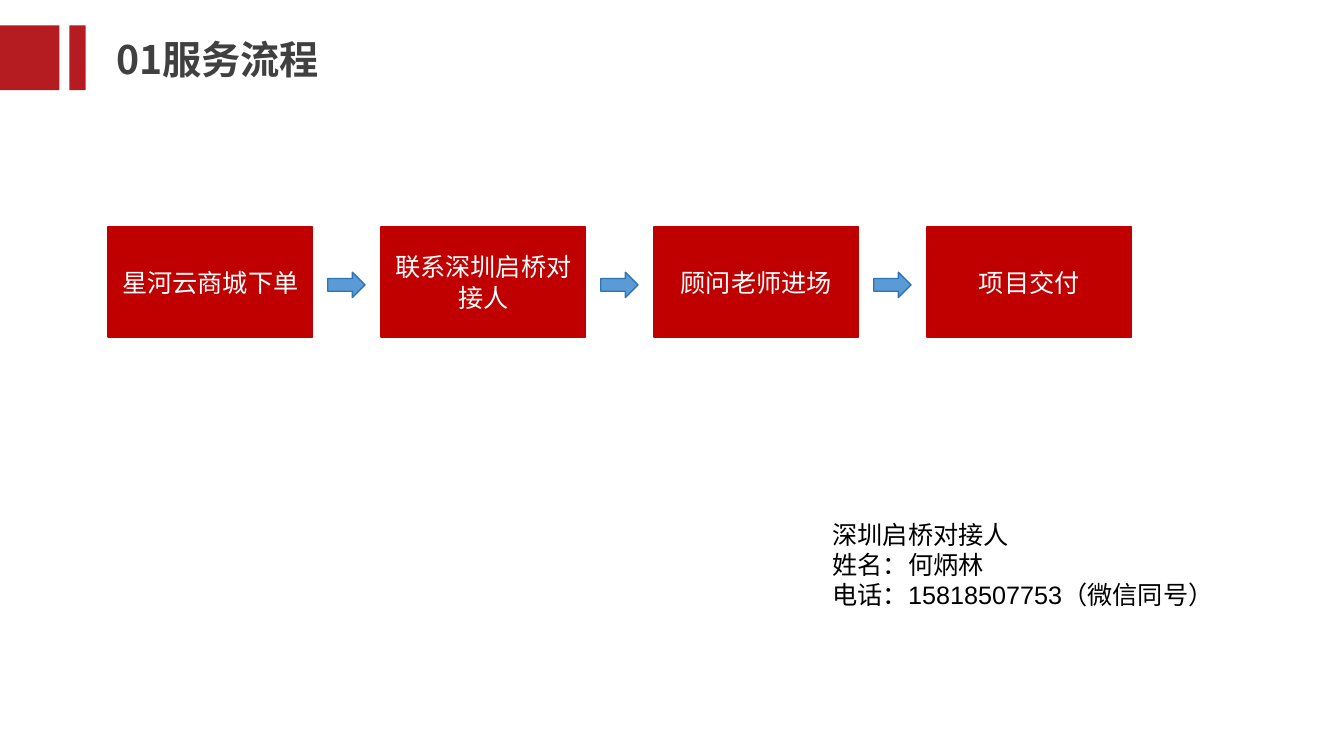
from dataclasses import dataclass

from lxml.etree import SubElement
from pptx import Presentation
from pptx.dml.color import RGBColor
from pptx.enum.shapes import MSO_SHAPE
from pptx.enum.text import MSO_ANCHOR, MSO_AUTO_SIZE, PP_ALIGN
from pptx.oxml.ns import qn
from pptx.util import Cm, Pt


@dataclass(frozen=True)
class Theme:
    accent: str = "B51C22"
    step: str = "C00000"
    arrow: str = "5B9BD5"
    arrow_line: str = "2E75B6"
    heading: str = "404040"
    body: str = "000000"
    on_step: str = "FFFFFF"
    body_font: str = "Arial"
    chinese_font: str = "Noto Sans CJK SC"
    heading_size: int = 28
    body_size: int = 18


class SlideBuilder:
    def __init__(self, deck, theme):
        self.theme = theme
        self.slide = deck.slides.add_slide(deck.slide_layouts[5])

    def format_text(self, frame, size, color, font, align, bold=False):
        for paragraph in frame.paragraphs:
            paragraph.alignment = align
            for run in paragraph.runs:
                run.font.size = Pt(size)
                run.font.bold = bold
                run.font.name = font
                run.font.color.rgb = RGBColor.from_string(color)
                east_asian = SubElement(run.font._element, qn("a:ea"))
                east_asian.set("typeface", self.theme.chinese_font)

    def title(self, text, left, top, width, height):
        heading = self.slide.shapes.title
        heading.left, heading.top = Cm(left), Cm(top)
        heading.width, heading.height = Cm(width), Cm(height)
        frame = heading.text_frame
        frame.text = text
        frame.auto_size = MSO_AUTO_SIZE.NONE
        frame.vertical_anchor = MSO_ANCHOR.MIDDLE
        frame.paragraphs[0].line_spacing = 0.9
        self.format_text(frame, self.theme.heading_size, self.theme.heading,
                         self.theme.chinese_font, PP_ALIGN.LEFT, bold=True)

    def block(self, kind, left, top, width, height, fill, line=None):
        shape = self.slide.shapes.add_shape(
            kind, Cm(left), Cm(top), Cm(width), Cm(height))
        shape.shadow.inherit = False
        shape.fill.solid()
        shape.fill.fore_color.rgb = RGBColor.from_string(fill)
        if line:
            shape.line.color.rgb = RGBColor.from_string(line)
            shape.line.width = Pt(1)
        else:
            shape.line.fill.background()
        return shape

    def accent(self, left, width):
        self.block(MSO_SHAPE.RECTANGLE, left, 0.64, width, 1.63,
                   self.theme.accent)

    def step(self, text, left, top, width, height):
        box = self.block(MSO_SHAPE.RECTANGLE, left, top, width, height,
                         self.theme.step, self.theme.step)
        frame = box.text_frame
        frame.text = text
        frame.word_wrap = True
        frame.vertical_anchor = MSO_ANCHOR.MIDDLE
        self.format_text(frame, self.theme.body_size, self.theme.on_step,
                         self.theme.body_font, PP_ALIGN.CENTER)

    def arrow(self, left, top):
        self.block(MSO_SHAPE.RIGHT_ARROW, left, top, 0.94, 0.64,
                   self.theme.arrow, self.theme.arrow_line)

    def note(self, lines, left, top, width, height):
        frame = self.slide.shapes.add_textbox(
            Cm(left), Cm(top), Cm(width), Cm(height)).text_frame
        frame.text = "\n".join(lines)
        frame.word_wrap = True
        frame.auto_size = MSO_AUTO_SIZE.SHAPE_TO_FIT_TEXT
        self.format_text(frame, self.theme.body_size, self.theme.body,
                         self.theme.body_font, PP_ALIGN.LEFT)


STEPS = ["星河云商城下单", "联系深圳启桥对接人", "顾问老师进场", "项目交付"]
CONTACT = ["深圳启桥对接人", "姓名：何炳林", "电话：15818507753（微信同号）"]
STEP_PITCH = 6.88


def main():
    deck = Presentation()
    deck.slide_width, deck.slide_height = Cm(33.87), Cm(19.05)
    page = SlideBuilder(deck, Theme())

    page.accent(0, 1.5)
    page.accent(1.75, 0.41)
    page.title("01服务流程", 2.67, 0.51, 24.69, 2.08)

    for index, step in enumerate(STEPS):
        page.step(step, 2.72 + index * STEP_PITCH, 5.72, 5.16, 2.77)
    page.note(CONTACT, 20.73, 12.95, 11.23, 2.57)
    for index in range(len(STEPS) - 1):
        page.arrow(8.26 + index * STEP_PITCH, 6.86)

    deck.save("out.pptx")


if __name__ == "__main__":
    main()
